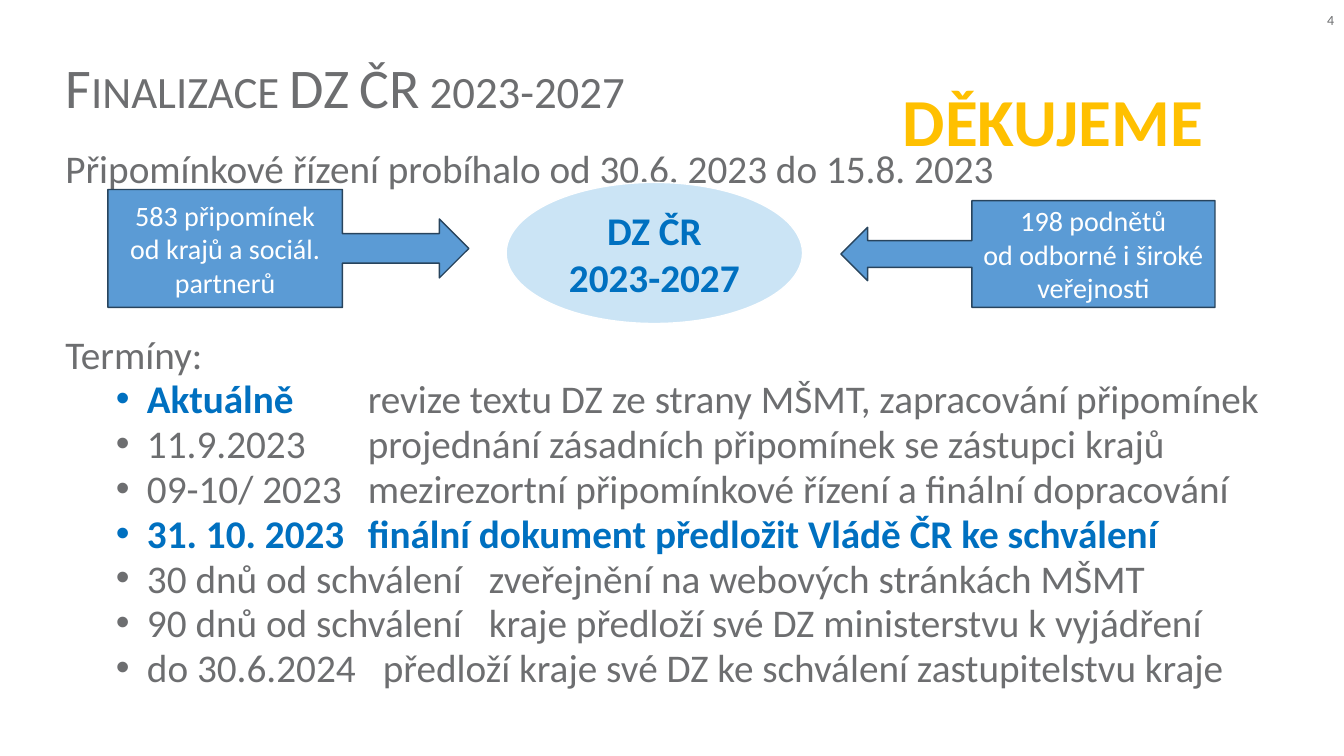
from lxml.etree import SubElement
from pptx import Presentation
from pptx.dml.color import RGBColor
from pptx.enum.shapes import MSO_SHAPE
from pptx.enum.text import MSO_ANCHOR, MSO_AUTO_SIZE, PP_ALIGN
from pptx.oxml.ns import qn
from pptx.util import Emu, Pt

PX = 9144
FONT = "Calibri"
COLORS = {
    "grey": "6D6E70",
    "blue": "0070C0",
    "gold": "FFC000",
    "white": "FFFFFF",
    "callout": "5B9BD5",
    "callout_edge": "28445D",
    "oval": "CBE4F5",
}
DEADLINES = [
    ("Aktuálně", "revize textu DZ ze strany MŠMT, zapracování připomínek", 300, True, False),
    ("11.9.2023", "projednání zásadních připomínek se zástupci krajů", 300, False, False),
    ("09-10/ 2023", "mezirezortní připomínkové řízení a finální dopracování", 300, False, False),
    ("31. 10. 2023", "finální dokument předložit Vládě ČR ke schválení", 300, True, True),
    ("30 dnů od schválení", "zveřejnění na webových stránkách MŠMT", 420, False, False),
    ("90 dnů od schválení", "kraje předloží své DZ ministerstvu k vyjádření", 420, False, False),
    ("do 30.6.2024", "předloží kraje své DZ ke schválení zastupitelstvu kraje", 315, False, False),
]


def px(length):
    """Turn px into EMU."""
    return Emu(length * PX)


def color(name):
    """Look up a named colour."""
    return RGBColor.from_string(COLORS[name])


def add_run(paragraph, text, size, tint, bold=False):
    """Append one formatted run."""
    run = paragraph.add_run()
    run.text = text
    run.font.name = FONT
    run.font.size = Pt(size)
    run.font.bold = bold
    run.font.color.rgb = color(tint)
    return run


def add_text(slide, box, text, size, tint, bold=False, align=PP_ALIGN.LEFT,
             anchor=MSO_ANCHOR.TOP, wrap=True):
    """Place a text box with one paragraph and return its frame."""
    frame = slide.shapes.add_textbox(*map(px, box)).text_frame
    frame.word_wrap = wrap
    frame.vertical_anchor = anchor
    paragraph = frame.paragraphs[0]
    paragraph.alignment = align
    add_run(paragraph, text, size, tint, bold)
    return frame


def add_title(slide, box, text):
    """Move and format the title placeholder."""
    title = slide.shapes.title
    title.left, title.top, title.width, title.height = map(px, box)
    frame = title.text_frame
    frame.auto_size = MSO_AUTO_SIZE.NONE
    frame.vertical_anchor = MSO_ANCHOR.TOP
    paragraph = frame.paragraphs[0]
    paragraph.alignment = PP_ALIGN.LEFT
    paragraph.line_spacing = 0.9
    run = add_run(paragraph, text, 40, "grey")
    run.font._element.set("cap", "small")


def add_figure(slide, preset, box, lines, size, fill, edge, tint, bold=False):
    """Place a filled shape with centred text."""
    figure = slide.shapes.add_shape(preset, *map(px, box))
    figure.shadow.inherit = False
    figure.fill.solid()
    figure.fill.fore_color.rgb = color(fill)
    figure.line.color.rgb = color(edge)
    figure.line.width = Pt(1)
    frame = figure.text_frame
    frame.word_wrap = True
    frame.vertical_anchor = MSO_ANCHOR.MIDDLE
    paragraph = frame.paragraphs[0]
    paragraph.alignment = PP_ALIGN.CENTER
    for index, line in enumerate(lines):
        if index:
            paragraph.add_line_break()
        add_run(paragraph, line, size, tint, bold)


def add_inputs(slide, box):
    """Draw both callouts pointing at the central document."""
    left, top, width, height = box
    add_figure(slide, MSO_SHAPE.RIGHT_ARROW_CALLOUT, (left, top + 7, 358, 117),
               ["583 připomínek", "od krajů a sociál. partnerů"],
               20, "callout", "callout_edge", "white")
    add_figure(slide, MSO_SHAPE.LEFT_ARROW_CALLOUT, (left + width - 371, top + 18, 371, 106),
               ["198 podnětů", "od odborné i široké veřejnosti"],
               20, "callout", "callout_edge", "white")
    add_figure(slide, MSO_SHAPE.OVAL, (left + 395, top, 294, height),
               ["DZ ČR 2023-2027"], 28, "oval", "white", "blue", True)


def format_deadline(paragraph, tab):
    """Give a deadline its indent, bullet and tab stop."""
    paragraph.level = 1
    paragraph.line_spacing = Pt(24)
    paragraph.space_after = Pt(8)
    properties = paragraph._p.get_or_add_pPr()
    properties.set("marL", str(px(81)))
    properties.set("indent", str(px(-31)))
    SubElement(properties, qn("a:buFont"), typeface="Arial")
    SubElement(properties, qn("a:buChar"), char="•")
    stops = SubElement(properties, qn("a:tabLst"))
    SubElement(stops, qn("a:tab"), pos=str(px(tab)), algn="l")


def add_deadlines(slide, box):
    """Place the list of deadlines under its heading."""
    frame = add_text(slide, box, "Termíny:", 28, "grey")
    heading = frame.paragraphs[0]
    heading.line_spacing = 1.05
    heading.space_after = Pt(8)
    for date, task, tab, date_marked, task_marked in DEADLINES:
        paragraph = frame.add_paragraph()
        format_deadline(paragraph, tab)
        for text, marked in ((date, date_marked), ("\t" + task, task_marked)):
            add_run(paragraph, text, 28, "blue" if marked else "grey", marked)


def main():
    """Build the slide and save it."""
    deck = Presentation()
    deck.slide_width, deck.slide_height = px(1333), px(750)
    slide = deck.slides.add_slide(deck.slide_layouts[5])
    add_title(slide, (55, 55, 1150, 93), "Finalizace DZ ČR 2023-2027")
    add_text(slide, (1033, 0, 300, 40), "4", 10, "grey",
             align=PP_ALIGN.RIGHT, anchor=MSO_ANCHOR.MIDDLE)
    add_text(slide, (55, 138, 1223, 215),
             "Připomínkové řízení probíhalo od 30.6. 2023 do 15.8. 2023", 28, "grey")
    add_inputs(slide, (107, 181, 1098, 140))
    add_text(slide, (884, 74, 321, 91), "DĚKUJEME", 48, "gold", True,
             align=PP_ALIGN.CENTER, wrap=False)
    add_deadlines(slide, (55, 320, 1214, 376))
    deck.save("out.pptx")


if __name__ == "__main__":
    main()
